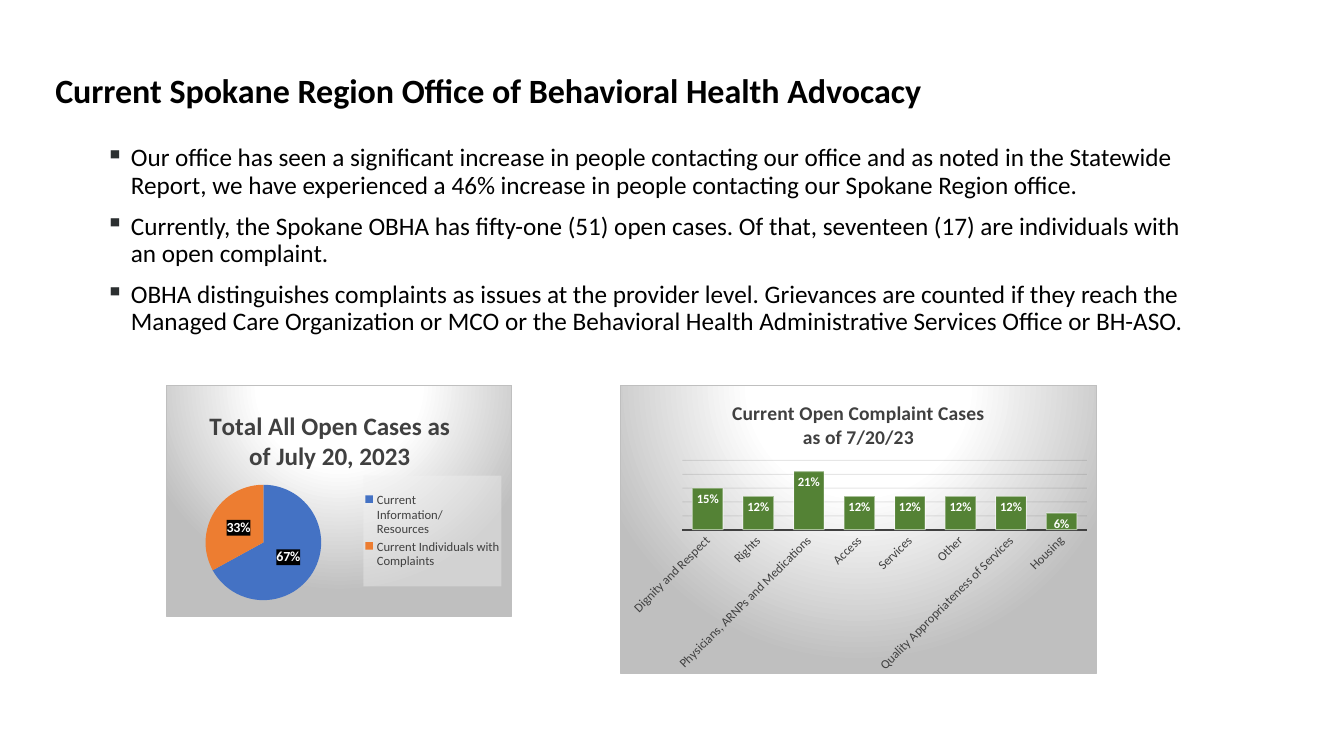
import pptx
import pptx.chart.data
import pptx.dml.color
import pptx.enum.chart
import pptx.enum.text
import pptx.oxml
import pptx.oxml.ns
import pptx.util

W, H = 13.33, 7.5
FONT = "Calibri"
NS = pptx.oxml.ns.nsdecls("a", "c")
DARK = "404040"
BULLETS = [
    "Our office has seen a significant increase in people contacting our office and as noted in the "
    "Statewide Report, we have experienced a 46% increase in people contacting our Spokane Region office.",
    "Currently, the Spokane OBHA has fifty-one (51) open cases. Of that, seventeen (17) are individuals "
    "with an open complaint.",
    "OBHA distinguishes complaints as issues at the provider level. Grievances are counted if they reach "
    "the Managed Care Organization or MCO or the Behavioral Health Administrative Services Office or BH-ASO.",
]
CASES = {"Current Information/Resources": 67, "Current Individuals with Complaints": 33}
COMPLAINTS = {
    "Dignity and Respect": 0.15, "Rights": 0.12, "Physicians, ARNPs and Medications": 0.21,
    "Access": 0.12, "Services": 0.12, "Other": 0.12,
    "Quality Appropriateness of Services": 0.12, "Housing": 0.06,
}
CHART_FILL = (
    '<a:gradFill><a:gsLst><a:gs pos="0"><a:srgbClr val="FFFFFF"/></a:gs>'
    '<a:gs pos="39000"><a:srgbClr val="FFFFFF"/></a:gs>'
    '<a:gs pos="100000"><a:srgbClr val="BFBFBF"/></a:gs></a:gsLst>'
    '<a:path path="circle"><a:fillToRect l="50000" t="-80000" r="50000" b="180000"/></a:path>'
    '</a:gradFill><a:ln w="9525"><a:solidFill><a:srgbClr val="BFBFBF"/></a:solidFill></a:ln>'
)


def rgb(color):
    return pptx.dml.color.RGBColor.from_string(color)


def style(font, size, color, bold=False):
    font.name, font.size, font.bold = FONT, pptx.util.Pt(size), bold
    font.color.rgb = rgb(color)


def inches(box):
    return [pptx.util.Inches(v) for v in box]


def clear_fill(color, alpha):
    return (f'<a:solidFill><a:srgbClr val="{color}"><a:alpha val="{alpha * 1000}"/>'
            '</a:srgbClr></a:solidFill>')


def shape_props(content):
    return pptx.oxml.parse_xml(f"<c:spPr {NS}>{content}</c:spPr>")


def set_layout(element, index, inner=False, **shares):
    """Place a chart part by shares of the chart's size."""
    for old in element.xpath("c:layout"):
        element.remove(old)
    target = '<c:layoutTarget val="inner"/>' if inner else ""
    modes = '<c:xMode val="edge"/><c:yMode val="edge"/>'
    sizes = "".join(f'<c:{k} val="{v}"/>' for k, v in shares.items())
    element.insert(index, pptx.oxml.parse_xml(
        f"<c:layout {NS}><c:manualLayout>{target}{modes}{sizes}</c:manualLayout></c:layout>"))


def add_text(s, box, paragraphs, size, bold=False):
    tf = s.shapes.add_textbox(*inches(box)).text_frame
    tf.word_wrap = True
    tf.text = "\n".join(paragraphs)
    for p in tf.paragraphs:
        p.line_spacing = 0.9
        style(p.runs[0].font, size, "000000", bold)
    return tf


def add_title(s, box):
    tf = add_text(s, box, ["Current Spokane Region Office of Behavioral Health Advocacy"], 24.3, True)
    tf.vertical_anchor = pptx.enum.text.MSO_ANCHOR.BOTTOM


def add_bullets(s, box):
    for i, p in enumerate(add_text(s, box, BULLETS, 18).paragraphs):
        p.space_before = pptx.util.Pt(10 if i else 0)
        pPr = p._p.get_or_add_pPr()
        pPr.set("marL", str(pptx.util.Inches(0.75)))
        pPr.set("indent", str(pptx.util.Inches(-0.25)))
        for xml in (f'<a:buClr {NS}><a:srgbClr val="2B2F30"/></a:buClr>',
                    f'<a:buChar {NS} char="▪"/>'):
            pPr.append(pptx.oxml.parse_xml(xml))


def add_chart(s, box, kind, values, title, title_size):
    data = pptx.chart.data.CategoryChartData()
    data.categories = list(values)
    data.add_series("Series 1", list(values.values()))
    chart = s.shapes.add_chart(kind, *inches(box), data).chart
    style(chart.font, 10, "000000")
    chart._chartSpace.xpath("c:chart")[0].addnext(shape_props(CHART_FILL))
    chart.has_title = True
    tf = chart.chart_title.text_frame
    tf.text = title
    for p in tf.paragraphs:
        style(p.runs[0].font, title_size, DARK, True)
    chart.chart_title.include_in_layout = False
    chart.has_legend = False
    return chart


def add_labels(plot, size, position):
    plot.has_data_labels = True
    labels = plot.data_labels
    style(labels.font, size, "FFFFFF", True)
    labels.number_format, labels.number_format_is_linked = "0%", False
    labels.position = position
    return labels


def add_cases_pie(s, box):
    chart = add_chart(s, box, pptx.enum.chart.XL_CHART_TYPE.PIE, CASES,
                      "Total All Open Cases as of July 20, 2023", 18)
    set_layout(chart.chart_title._element, 1, x=0.11, y=0.08)
    plot = chart.plots[0]
    plot.vary_by_categories = True
    for i, color in enumerate(["4472C4", "ED7D31"]):
        fill = plot.series[0].points[i].format.fill
        fill.solid()
        fill.fore_color.rgb = rgb(color)
    labels = add_labels(plot, 10, pptx.enum.chart.XL_LABEL_POSITION.CENTER)
    labels.show_value, labels.show_percentage = False, True
    labels._element.xpath("c:txPr")[0].addprevious(shape_props(clear_fill("000000", 75)))

    chart.has_legend = True
    legend = chart.legend
    legend.position = pptx.enum.chart.XL_LEGEND_POSITION.RIGHT
    legend.include_in_layout = False
    style(legend.font, 9, DARK)
    legend._element.xpath("c:txPr")[0].addprevious(shape_props(clear_fill("F2F2F2", 39)))
    set_layout(legend._element, 1, x=0.57, y=0.39, w=0.4, h=0.48)
    set_layout(chart._chartSpace.xpath("c:chart/c:plotArea")[0], 0, True,
               x=0.11, y=0.43, w=0.34, h=0.5)


def add_complaint_columns(s, box):
    chart = add_chart(s, box, pptx.enum.chart.XL_CHART_TYPE.COLUMN_CLUSTERED, COMPLAINTS,
                      "Current Open Complaint Cases\nas of 7/20/23", 14)
    plot = chart.plots[0]
    plot.vary_by_categories = False
    plot.gap_width = 65
    bars = plot.series[0].format
    bars.fill.solid()
    bars.fill.fore_color.rgb = rgb("548235")
    bars.line.width = pptx.util.Pt(0.75)
    bars.line.color.rgb = rgb("FFFFFF")
    add_alpha(bars.line, 50)
    add_labels(plot, 9, pptx.enum.chart.XL_LABEL_POSITION.INSIDE_END).show_value = True

    axis = chart.category_axis
    axis.major_tick_mark = pptx.enum.chart.XL_TICK_MARK.NONE
    style(axis.tick_labels.font, 9, DARK)
    axis._element.xpath("c:txPr/a:bodyPr")[0].set("rot", "-2700000")
    axis.format.line.width = pptx.util.Pt(1.5)
    axis.format.line.color.rgb = rgb(DARK)

    axis = chart.value_axis
    axis.visible = False
    axis.minimum_scale, axis.maximum_scale, axis.major_unit = 0, 0.25, 0.05
    axis.tick_labels.number_format = "0%"
    axis.tick_labels.number_format_is_linked = False
    grid = axis.major_gridlines.format.line
    grid.width = pptx.util.Pt(0.75)
    grid.color.rgb = rgb("0D0D0D")
    add_alpha(grid, 10)
    set_layout(chart._chartSpace.xpath("c:chart/c:plotArea")[0], 0, True,
               x=0.13, y=0.26, w=0.85, h=0.24)


def add_alpha(line, percent):
    color = line._get_or_add_ln().xpath("a:solidFill/a:srgbClr")[0]
    color.append(pptx.oxml.parse_xml(f'<a:alpha {NS} val="{percent * 1000}"/>'))


def main():
    prs = pptx.Presentation()
    prs.slide_width, prs.slide_height = inches((W, H))
    s = prs.slides.add_slide(prs.slide_layouts[6])
    left, width, chart_top = 0.45, 11.5, 3.82
    add_title(s, (left, 0.53, width, 0.62))
    add_bullets(s, (left, 1.39, width, 2.2))
    add_cases_pie(s, (1.65, chart_top, 3.43, 2.3))
    add_complaint_columns(s, (6.15, chart_top, 4.73, 2.87))
    prs.save("out.pptx")


if __name__ == "__main__":
    main()
